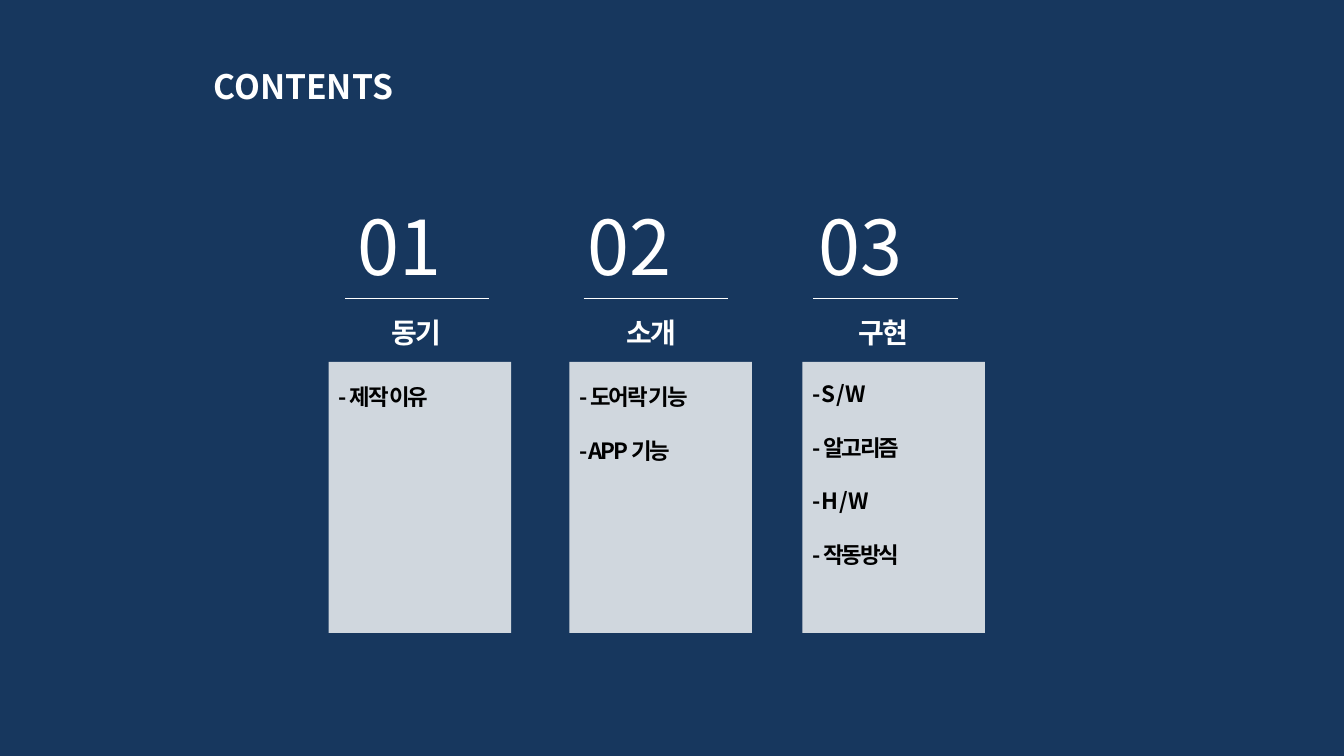
from lxml import etree
from pptx import Presentation
from pptx import util as u
from pptx.dml.color import RGBColor
from pptx.enum import shapes, text
from pptx.oxml.ns import qn

COLORS = {"navy": "17375E", "white": "FFFFFF", "black": "000000"}
FONT = "Noto Sans CJK KR"
COLUMNS = [
    {"number": "01", "name": "동기", "items": ["- 제작 이유"],
     "x": (8.33, 8.69, 8.2, 8.28), "items_top": 9.53},
    {"number": "02", "name": "소개", "items": ["- 도어락 기능", "- APP 기능"],
     "x": (14.12, 14.71, 14.12, 14.35), "items_top": 9.53},
    {"number": "03", "name": "구현",
     "items": ["- S / W", "- 알고리즘", "- H / W", "- 작동방식"],
     "x": (19.94, 20.5, 19.96, 20.22), "items_top": 9.45},
]
COLUMN_WIDTH = 4.6


class ContentsSlide:
    """Draws styled elements on one slide, with lengths in centimetres."""

    def __init__(self, prs):
        self.s = prs.slides.add_slide(prs.slide_layouts[5])
        fill = self.s.background.fill
        fill.solid()
        fill.fore_color.rgb = self.color("navy")

    def color(self, name):
        return RGBColor.from_string(COLORS[name])

    def set_text(self, sp, lines, size, color="white", bold=True, spacing=0,
                 align=text.PP_ALIGN.LEFT, inset=0.25):
        tf = sp.text_frame
        tf.word_wrap = True
        tf.auto_size = text.MSO_AUTO_SIZE.NONE
        tf.vertical_anchor = text.MSO_ANCHOR.TOP
        tf.margin_left, tf.margin_right = u.Cm(inset), u.Cm(0.25)
        tf.margin_top = tf.margin_bottom = u.Cm(0.13)
        tf.text = "\n".join(lines)
        for i, p in enumerate(tf.paragraphs):
            p.alignment = align
            p.line_spacing = u.Pt(size * 1.2)
            p.space_before = u.Pt(size * 1.2 if i else 0)
            p.font.size, p.font.bold = u.Pt(size), bold
            p.font.color.rgb = self.color(color)
            p.font.name = FONT
            props = p._p.pPr.find(qn("a:defRPr"))
            props.set("spc", str(int(spacing * 100)))
            etree.SubElement(props, qn("a:ea")).set("typeface", FONT)

    def title(self, line, x, y, w, h):
        sp = self.s.shapes.title
        sp.left, sp.top, sp.width, sp.height = map(u.Cm, (x, y, w, h))
        self.set_text(sp, [line], 24)

    def label(self, lines, x, y, w, h, size, **style):
        sp = self.s.shapes.add_textbox(*map(u.Cm, (x, y, w, h)))
        self.set_text(sp, lines, size, **style)

    def panel(self, x, y, w, h, opacity):
        sp = self.s.shapes.add_shape(
            shapes.MSO_SHAPE.RECTANGLE, *map(u.Cm, (x, y, w, h)))
        sp.shadow.inherit = False
        sp.line.fill.background()
        sp.fill.solid()
        sp.fill.fore_color.rgb = self.color("white")
        rgb = sp._element.spPr.find(qn("a:solidFill"))[0]
        etree.SubElement(rgb, qn("a:alpha")).set("val", str(opacity * 1000))

    def rule(self, x, y, w):
        line = self.s.shapes.add_connector(
            shapes.MSO_CONNECTOR.STRAIGHT, *map(u.Cm, (x, y, x + w, y)))
        line.line.color.rgb = self.color("white")
        line.line.width = u.Pt(0.75)
        etree.SubElement(line._element.spPr, qn("a:effectLst"))

    def column(self, number, name, items, x, items_top):
        number_x, rule_x, name_x, panel_x = x
        self.label([number], number_x, 4.92, COLUMN_WIDTH, 2.57, 54,
                   bold=False, inset=0.68)
        self.rule(rule_x, 7.52, 3.63)
        self.label([name], name_x, 7.82, COLUMN_WIDTH, 1.11, 20,
                   spacing=-1.5, align=text.PP_ALIGN.CENTER)
        self.panel(panel_x, 9.12, COLUMN_WIDTH, 6.83, 80)
        self.label(items, panel_x, items_top, COLUMN_WIDTH,
                   1.36 * len(items) - 0.42, 16,
                   color="black", spacing=-1.5)


def main():
    prs = Presentation()
    prs.slide_width, prs.slide_height = u.Cm(33.87), u.Cm(19.05)
    contents = ContentsSlide(prs)
    contents.title("CONTENTS", 5.13, 1.52, 11.61, 1.28)
    for column in COLUMNS:
        contents.column(**column)
    prs.save("out.pptx")


if __name__ == "__main__":
    main()
